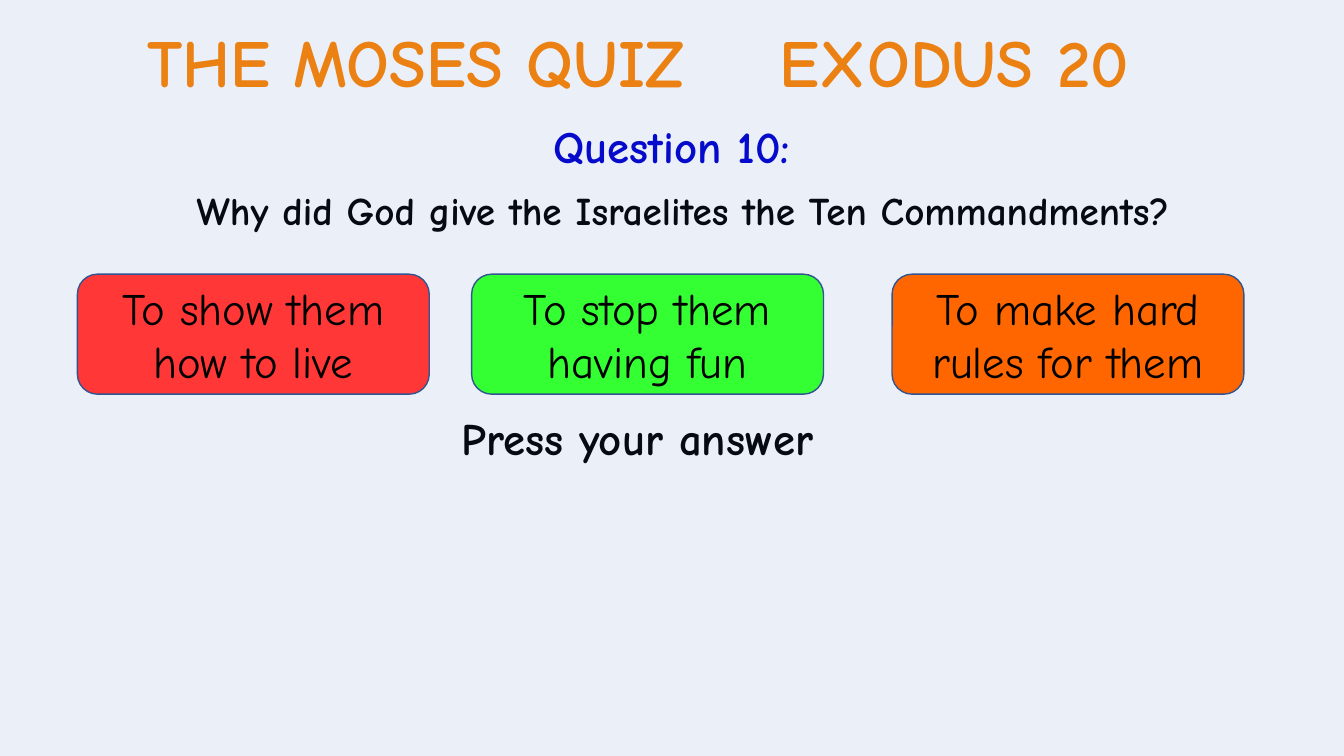
from dataclasses import dataclass

from lxml import etree
from pptx import Presentation
from pptx import util as u
from pptx.dml import color
from pptx.enum import shapes, text
from pptx.oxml import ns

FONT = "Comic Neue"
BLACK = "000000"
OUTLINE = "325491"
SLIDE_WIDTH, SLIDE_HEIGHT = 960, 540
BUTTON_TOP, BUTTON_WIDTH, BUTTON_HEIGHT = 195.84, 251.28, 85.68
CENTER, LEFT = text.PP_ALIGN.CENTER, text.PP_ALIGN.LEFT


@dataclass
class Answer:
    label: str
    left: float
    fill: str


ANSWERS = [
    Answer("To show them how to live", 55.3, "FF3737"),
    Answer("To stop them having fun", 336.9, "33FF33"),
    Answer("To make hard rules for them", 637.2, "FF6600"),
]


def paint(target, hex_color: str) -> None:
    target.solid()
    target.fore_color.rgb = color.RGBColor.from_string(hex_color)


def place(shape, left: float, top: float, width: float, height: float) -> None:
    shape.left, shape.top = u.Pt(left), u.Pt(top)
    shape.width, shape.height = u.Pt(width), u.Pt(height)


def write(shape, content: str, *, size: float = 32, hex_color: str = BLACK,
          bold: bool = True, align=CENTER, anchor=text.MSO_ANCHOR.TOP,
          before: float = 0, spacing=1.0):
    frame = shape.text_frame
    frame.word_wrap = True
    frame.auto_size = text.MSO_AUTO_SIZE.NONE
    frame.vertical_anchor = anchor
    paragraph = frame.paragraphs[0]
    paragraph.alignment = align
    paragraph.space_before = u.Pt(before)
    paragraph.line_spacing = spacing
    run = paragraph.add_run()
    run.text = content
    run.font.name = FONT
    run.font.size = u.Pt(size)
    run.font.bold = bold
    paint(run.font.fill, hex_color)
    return paragraph


def add_title(slide) -> None:
    title = slide.shapes.title
    place(title, 31, 10.8, 869, 65.5)
    paragraph = write(title, "THE MOSES QUIZ\tEXODUS 20", size=48,
                      hex_color="FF8200", align=LEFT)
    title.text_frame.margin_left = u.Pt(74)
    properties = paragraph._p.get_or_add_pPr()
    tabs = etree.SubElement(properties, ns.qn("a:tabLst"))
    etree.SubElement(tabs, ns.qn("a:tab"), pos=str(u.Pt(452)), algn="l")


def add_question(slide) -> None:
    question = slide.placeholders[1]
    place(question, 71.3, 127.4, 833, 85.7)
    paragraph = write(question,
                      "Why did God give the Israelites the Ten Commandments?",
                      size=28, before=10, spacing=u.Pt(36))
    properties = paragraph._p.get_or_add_pPr()
    properties.set("marL", "0")
    properties.set("indent", "0")
    etree.SubElement(properties, ns.qn("a:buNone"))


def add_label(slide, content: str, left: float, top: float, width: float,
              height: float, **style) -> None:
    box = slide.shapes.add_textbox(0, 0, 0, 0)
    place(box, left, top, width, height)
    write(box, content, **style)


def add_box(slide, kind, left: float, top: float, width: float,
            height: float, fill: str):
    shape = slide.shapes.add_shape(kind, 0, 0, 0, 0)
    place(shape, left, top, width, height)
    shape.shadow.inherit = False
    paint(shape.fill, fill)
    return shape


def add_tint(slide) -> None:
    tint = add_box(slide, shapes.MSO_SHAPE.RECTANGLE, 0, 0,
                   SLIDE_WIDTH, SLIDE_HEIGHT, "4472C4")
    tint.line.fill.background()
    fill_color = tint._element.spPr.find(".//" + ns.qn("a:srgbClr"))
    etree.SubElement(fill_color, ns.qn("a:alpha"), val="10000")


def add_answer(slide, answer: Answer) -> None:
    button = add_box(slide, shapes.MSO_SHAPE.ROUNDED_RECTANGLE, answer.left,
                     BUTTON_TOP, BUTTON_WIDTH, BUTTON_HEIGHT, answer.fill)
    paint(button.line.fill, OUTLINE)
    button.line.width = u.Pt(1)
    write(button, answer.label, bold=False, anchor=text.MSO_ANCHOR.MIDDLE)


def main() -> None:
    presentation = Presentation()
    presentation.slide_width = u.Pt(SLIDE_WIDTH)
    presentation.slide_height = u.Pt(SLIDE_HEIGHT)
    slide = presentation.slides.add_slide(presentation.slide_layouts[1])
    paint(slide.background.fill, "FFFFFF")
    add_title(slide)
    add_question(slide)
    add_label(slide, "Press your answer", 322.6, 294.5, 484.6, 51.8,
              align=LEFT, before=7.5, spacing=0.9)
    add_label(slide, "Question 10:", 321.1, 81.4, 317.5, 46.1,
              hex_color="0000CC")
    add_tint(slide)
    for answer in ANSWERS:
        add_answer(slide, answer)
    presentation.save("out.pptx")


if __name__ == "__main__":
    main()
